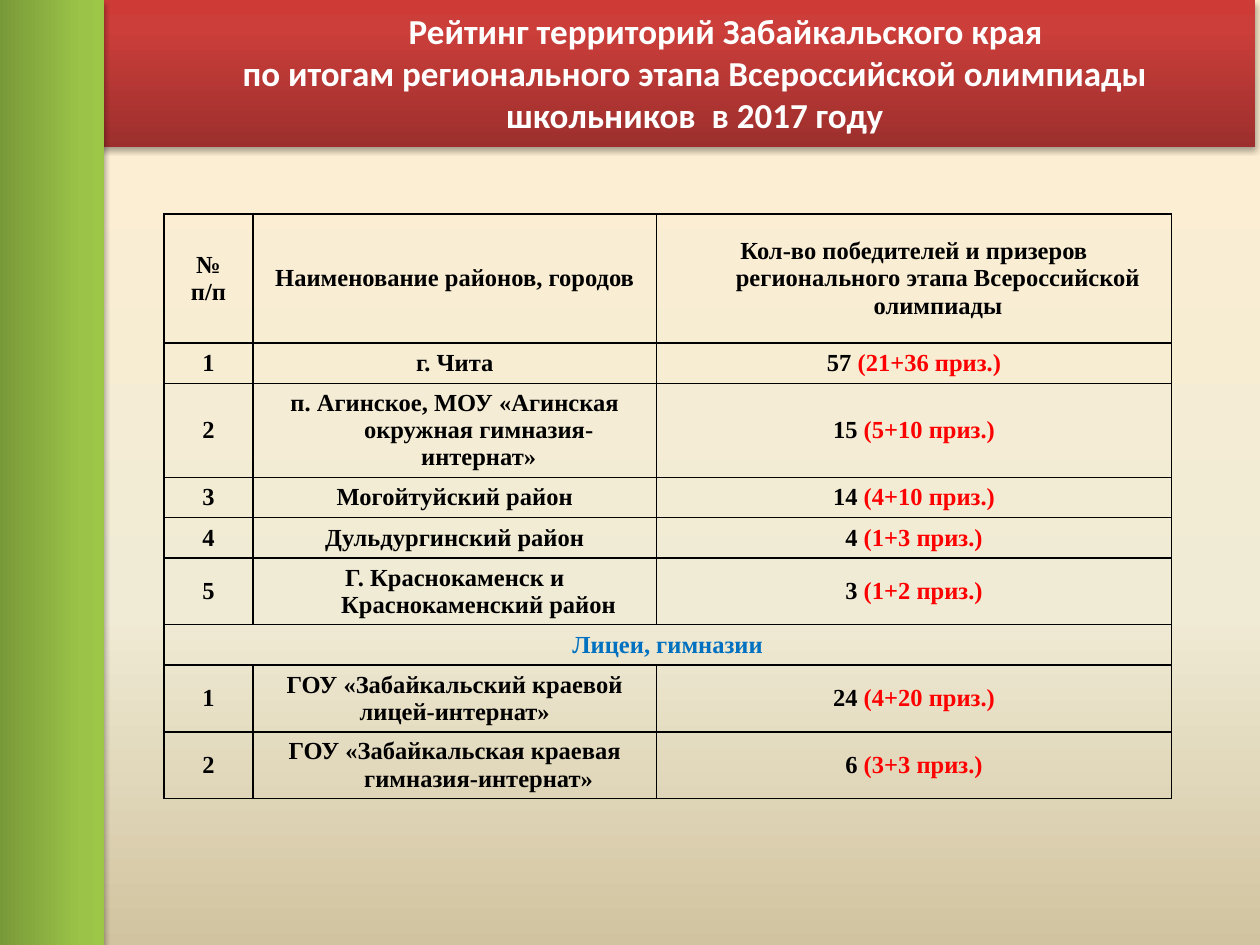
from lxml import etree
from pptx import Presentation
from pptx.dml.color import RGBColor
from pptx.enum.shapes import MSO_SHAPE
from pptx.enum.text import MSO_ANCHOR, MSO_AUTO_SIZE, PP_ALIGN
from pptx.oxml import parse_xml
from pptx.oxml.ns import nsdecls, qn
from pptx.util import Pt

RECTANGLE = MSO_SHAPE.RECTANGLE
MIDDLE = MSO_ANCHOR.MIDDLE
CENTER = PP_ALIGN.CENTER
NO_AUTOFIT = MSO_AUTO_SIZE.NONE

COLORS = {
    "text": "000000",
    "prizes": "FF0000",
    "section": "0070C0",
    "title": "FFFFFF",
    "border": "000000",
    "shadow": "000000",
}
GRADIENTS = {
    "background": [(0, "FFEFD1"), (65, "F0EBD5"), (100, "D1C39F")],
    "header": [(0, "9C2F2D"), (80, "CB3E3A"), (100, "CE3B37")],
    "side": [(0, "779737"), (80, "9BC348"), (100, "9DC746")],
}
SECTION = "Лицеи, гимназии"
ROWS = [
    ("№\nп/п", "Наименование районов, городов",
     "Кол-во победителей и призеров регионального этапа Всероссийской олимпиады", ""),
    ("1", "г. Чита", "57", "(21+36 приз.)"),
    ("2", "п. Агинское, МОУ «Агинская окружная гимназия-интернат»", "15", "(5+10 приз.)"),
    ("3", "Могойтуйский район", "14", "(4+10 приз.)"),
    ("4", "Дульдургинский район", "4", "(1+3 приз.)"),
    ("5", "Г. Краснокаменск и Краснокаменский район", "3", "(1+2 приз.)"),
    (SECTION, "", "", ""),
    ("1", "ГОУ «Забайкальский краевой лицей-интернат»", "24", "(4+20 приз.)"),
    ("2", "ГОУ «Забайкальская краевая гимназия-интернат»", "6", "(3+3 приз.)"),
]
SECTION_ROW = 6
UNINDENTED = {(7, 1), (7, 2)}
COLUMN_WIDTHS = [51.1, 230.4, 294.5]
HEADER_HEIGHT, ROW_HEIGHT = 73.7, 23.04
HANGING = Pt(27.36)


def set_gradient(fill, element, stops, angle):
    fill.gradient()
    fill.gradient_angle = angle
    stop_list = element.find(".//" + qn("a:gsLst"))
    for stop in list(stop_list):
        stop_list.remove(stop)
    for position, color in stops:
        stop = etree.SubElement(stop_list, qn("a:gs"), pos=str(position * 1000))
        etree.SubElement(stop, qn("a:srgbClr"), val=color)


def set_font(font, name, size, color):
    font.name = name
    font.size = Pt(size)
    font.bold = True
    font.color.rgb = RGBColor.from_string(color)


prs = Presentation()
prs.slide_width, prs.slide_height = Pt(720), Pt(540)
slide = prs.slides.add_slide(prs.slide_layouts[5])
set_gradient(slide.background.fill, slide.element, GRADIENTS["background"], 270)

ranking = slide.shapes.add_table(
    len(ROWS), len(COLUMN_WIDTHS), Pt(93.6), Pt(122.4), Pt(sum(COLUMN_WIDTHS)),
    Pt(HEADER_HEIGHT + ROW_HEIGHT * (len(ROWS) - 1))).table
ranking.first_row = ranking.horz_banding = False
for column, width in zip(ranking.columns, COLUMN_WIDTHS):
    column.width = Pt(width)
for row_index, (number, place, total, prizes) in enumerate(ROWS):
    ranking.rows[row_index].height = Pt(ROW_HEIGHT if row_index else HEADER_HEIGHT)
    for column_index, wording in enumerate((number, place, total)):
        cell = ranking.cell(row_index, column_index)
        cell.fill.background()
        cell.vertical_anchor = MIDDLE
        cell_properties = cell._tc.get_or_add_tcPr()
        for position, side in enumerate(("lnL", "lnR", "lnT", "lnB")):
            cell_properties.insert(position, parse_xml(
                f'<a:{side} {nsdecls("a")} w="12700"><a:solidFill>'
                f'<a:srgbClr val="{COLORS["border"]}"/></a:solidFill></a:{side}>'))
        cell.text = wording
        for paragraph in cell.text_frame.paragraphs:
            paragraph.alignment = CENTER
            if (row_index, column_index) not in UNINDENTED:
                properties = paragraph._p.get_or_add_pPr()
                properties.set("marL", str(HANGING))
                properties.set("indent", str(-HANGING))
            color = COLORS["section" if row_index == SECTION_ROW else "text"]
            set_font(paragraph.font, "Times New Roman", 14, color)
        if column_index == 2 and prizes:
            prize_run = cell.text_frame.paragraphs[0].add_run()
            prize_run.text = " " + prizes
            prize_run.font.color.rgb = RGBColor.from_string(COLORS["prizes"])
ranking.cell(SECTION_ROW, 0).merge(ranking.cell(SECTION_ROW, 2))

for band, left, top, width, height, rotation in [
    ("header", -2.88, 0, 720, 84.24, 0),
    ("side", -241.7, 239.04, 540, 61.92, 90),
]:
    bar = slide.shapes.add_shape(RECTANGLE, Pt(left), Pt(top), Pt(width), Pt(height))
    bar.rotation = rotation
    set_gradient(bar.fill, bar.element, GRADIENTS[band], 90)
    bar.line.fill.background()
    bar.shadow.inherit = False
    bar.element.spPr.find(qn("a:effectLst")).append(parse_xml(
        f'<a:outerShdw {nsdecls("a")} blurRad="{Pt(3.1)}" dist="{Pt(1.8)}" dir="5400000" '
        f'rotWithShape="0"><a:srgbClr val="{COLORS["shadow"]}"><a:alpha val="35000"/>'
        '</a:srgbClr></a:outerShdw>'))

title = slide.shapes.title
slide.shapes.element.append(title.element)
title.left, title.top, title.width, title.height = Pt(110.9), Pt(5.76), Pt(572.4), Pt(71.28)
title.text_frame.text = (
    "Рейтинг территорий Забайкальского края\v"
    "по итогам регионального этапа Всероссийской олимпиады школьников  в 2017 году")
title.text_frame.word_wrap = True
title.text_frame.auto_size = NO_AUTOFIT
title.text_frame.vertical_anchor = MIDDLE
heading = title.text_frame.paragraphs[0]
heading.alignment = CENTER
heading._p.get_or_add_pPr().set("indent", str(Pt(35.28)))
set_font(heading.font, "Calibri", 20, COLORS["title"])

prs.save("out.pptx")
